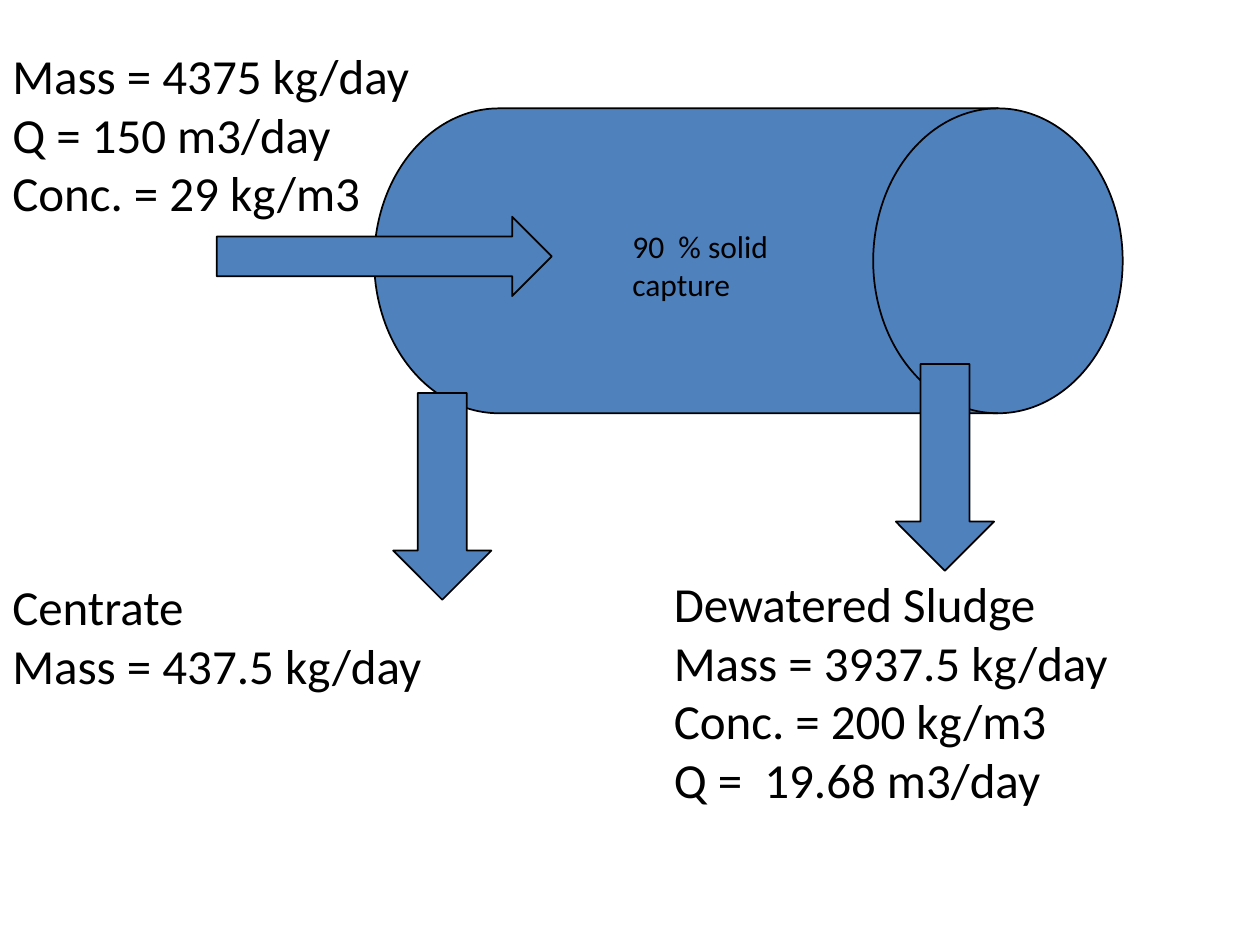
"""Build a slide showing the mass balance of a sludge centrifuge."""
from pptx import Presentation
from pptx.dml.color import RGBColor
from pptx.enum.shapes import MSO_SHAPE
from pptx.enum.text import MSO_AUTO_SIZE
from pptx.util import Emu, Pt

DRUM = MSO_SHAPE.FLOWCHART_MAGNETIC_DISK
RIGHT_ARROW = MSO_SHAPE.RIGHT_ARROW
DOWN_ARROW = MSO_SHAPE.DOWN_ARROW
GROW_TO_FIT = MSO_AUTO_SIZE.SHAPE_TO_FIT_TEXT
PX = 9144
FONT = "Calibri"
COLORS = {"fill": "4F81BD", "line": "000000", "text": "000000"}

feed = ["Mass = 4375 kg/day", "Q = 150 m3/day", "Conc. = 29 kg/m3"]
sludge = ["Dewatered Sludge", "Mass = 3937.5 kg/day", "Conc. = 200 kg/m3", "Q =  19.68 m3/day"]
centrate = ["Centrate", "Mass = 437.5 kg/day"]
capture = ["90  % solid capture"]

flow_shapes = [
    (DRUM, 473, -90, 242, 594, 90),
    (RIGHT_ARROW, 172, 172, 266, 63, 0),
    (DOWN_ARROW, 711, 289, 78, 164, 0),
    (DOWN_ARROW, 312, 312, 78, 164, 0),
]
labels = [
    (feed, 0, 31, 414, 151, 28),
    (sludge, 525, 450, 414, 199, 28),
    (centrate, 0, 453, 414, 104, 28),
    (capture, 492, 175, 208, 91, 18),
]

presentation = Presentation()
presentation.slide_width = Emu(1000 * PX)
presentation.slide_height = Emu(750 * PX)
slide = presentation.slides.add_slide(presentation.slide_layouts[6])

for kind, left, top, width, height, rotation in flow_shapes:
    shape = slide.shapes.add_shape(kind, left * PX, top * PX, width * PX, height * PX)
    shape.rotation = rotation
    shape.shadow.inherit = False
    shape.fill.solid()
    shape.fill.fore_color.rgb = RGBColor.from_string(COLORS["fill"])
    shape.line.color.rgb = RGBColor.from_string(COLORS["line"])
    shape.line.width = Pt(1)

for lines, left, top, width, height, size in labels:
    label = slide.shapes.add_textbox(left * PX, top * PX, width * PX, height * PX)
    text_frame = label.text_frame
    text_frame.word_wrap = True
    text_frame.auto_size = GROW_TO_FIT
    text_frame.text = "\n".join(lines)
    for paragraph in text_frame.paragraphs:
        for run in paragraph.runs:
            run.font.name = FONT
            run.font.size = Pt(size)
            run.font.color.rgb = RGBColor.from_string(COLORS["text"])

presentation.save("out.pptx")
